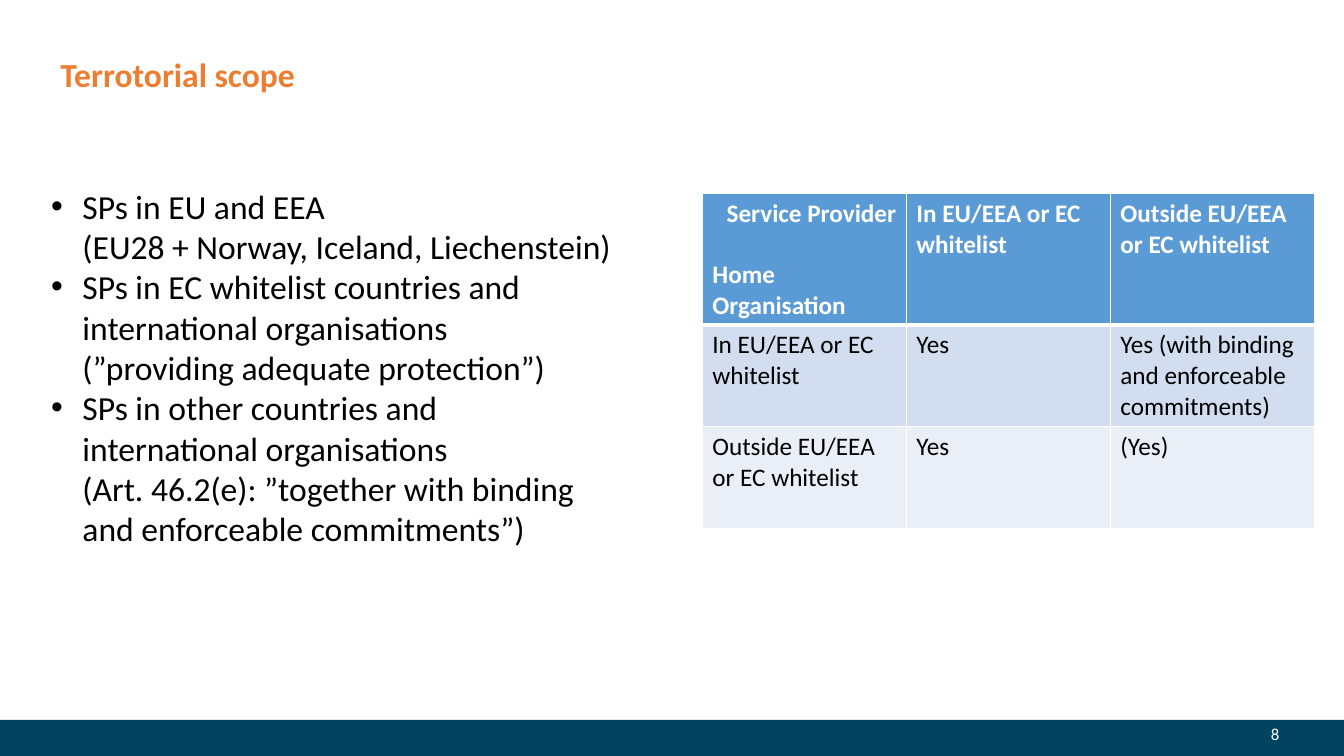
from dataclasses import dataclass

from lxml.etree import SubElement
from pptx import Presentation
from pptx.dml.color import RGBColor as Color
from pptx.enum.shapes import MSO_SHAPE as Shape
from pptx.enum.text import MSO_ANCHOR as Anchor, PP_ALIGN as Align
from pptx.oxml.ns import qn
from pptx.util import Cm, Pt


@dataclass(frozen=True)
class Theme:
    font: str = "Calibri"
    accent: str = "ED7D31"
    footer: str = "004360"
    header: str = "5B9BD5"
    bands: tuple = ("D2DEEF", "EAEFF7")
    light: str = "FFFFFF"
    dark: str = "000000"
    large: int = 24
    table: int = 18
    small: int = 12


theme = Theme()


def add_text(paragraph, text, size, color, bold=False):
    run = paragraph.add_run()
    run.text = text
    run.font.name = theme.font
    run.font.size = Pt(size)
    run.font.bold = bold
    run.font.color.rgb = Color.from_string(color)


def add_border(cell, side, width):
    line = SubElement(cell._tc.get_or_add_tcPr(), qn(f"a:ln{side}"), w=str(Pt(width)))
    fill = SubElement(line, qn("a:solidFill"))
    SubElement(fill, qn("a:srgbClr"), val=theme.light)


presentation = Presentation()
presentation.slide_width = Cm(33.87)
presentation.slide_height = Cm(19.05)
slide = presentation.slides.add_slide(presentation.slide_layouts[5])

footer = slide.shapes.add_shape(Shape.RECTANGLE, Cm(0), Cm(18.14), Cm(33.87), Cm(0.91))
footer.shadow.inherit = False
footer.fill.solid()
footer.fill.fore_color.rgb = Color.from_string(theme.footer)
footer.line.fill.background()

title = slide.shapes.title
title.left, title.top, title.width, title.height = Cm(1.27), Cm(0.56), Cm(29.21), Cm(2.62)
title.text_frame.vertical_anchor = Anchor.MIDDLE
paragraph = title.text_frame.paragraphs[0]
paragraph.alignment = Align.LEFT
add_text(paragraph, "Terrotorial scope", theme.large, theme.accent, True)

bullets = [
    ["SPs in EU and EEA", "(EU28 + Norway, Iceland, Liechenstein)"],
    ["SPs in EC whitelist countries and international organisations",
     "(”providing adequate protection”)"],
    ["SPs in other countries and international organisations",
     "(Art. 46.2(e): ”together with binding and enforceable commitments”)"],
]
body = slide.shapes.add_textbox(Cm(1.04), Cm(4.55), Cm(14.66), Cm(9.5))
frame = body.text_frame
frame.word_wrap = True
for index, lines in enumerate(bullets):
    paragraph = frame.add_paragraph() if index else frame.paragraphs[0]
    properties = paragraph._p.get_or_add_pPr()
    properties.set("marL", str(Cm(0.79)))
    properties.set("indent", str(Cm(-0.79)))
    SubElement(properties, qn("a:buFont"), typeface="Arial")
    SubElement(properties, qn("a:buChar"), char="•")
    for number, line in enumerate(lines):
        if number:
            paragraph.add_line_break()
        add_text(paragraph, line, theme.large, theme.dark)
    paragraph.font.size = Pt(theme.large)

inside, outside = "In EU/EEA or EC whitelist", "Outside EU/EEA or EC whitelist"
rows = [
    [("Service Provider", "Home Organisation"), (inside,), (outside,)],
    [(inside,), ("Yes",), ("Yes (with binding and enforceable commitments)",)],
    [(outside,), ("Yes",), ("(Yes)",)],
]
row_heights = [3.3, 2.57, 2.57]
table = slide.shapes.add_table(3, 3, Cm(17.7), Cm(4.87), Cm(15.42), Cm(sum(row_heights))).table
table.horz_banding = False
for row_index, row in enumerate(rows):
    table.rows[row_index].height = Cm(row_heights[row_index])
    is_header = row_index == 0
    for column_index, texts in enumerate(row):
        cell = table.cell(row_index, column_index)
        for side in "LRTB":
            thick = (is_header and side == "B") or (row_index == 1 and side == "T")
            add_border(cell, side, 3 if thick else 1)
        cell.fill.solid()
        cell.fill.fore_color.rgb = Color.from_string((theme.header, *theme.bands)[row_index])
        for index, text in enumerate(texts):
            paragraph = cell.text_frame.add_paragraph() if index else cell.text_frame.paragraphs[0]
            if index:
                paragraph.space_before = Pt(22)
            color = theme.light if is_header else theme.dark
            add_text(paragraph, text, theme.table, color, is_header)
table.cell(0, 0).text_frame.paragraphs[0].alignment = Align.RIGHT

page_number = slide.shapes.add_textbox(Cm(31.78), Cm(18.11), Cm(1.57), Cm(0.89))
page_number.text_frame.word_wrap = True
add_text(page_number.text_frame.paragraphs[0], "8", theme.small, theme.light)

presentation.save("out.pptx")
